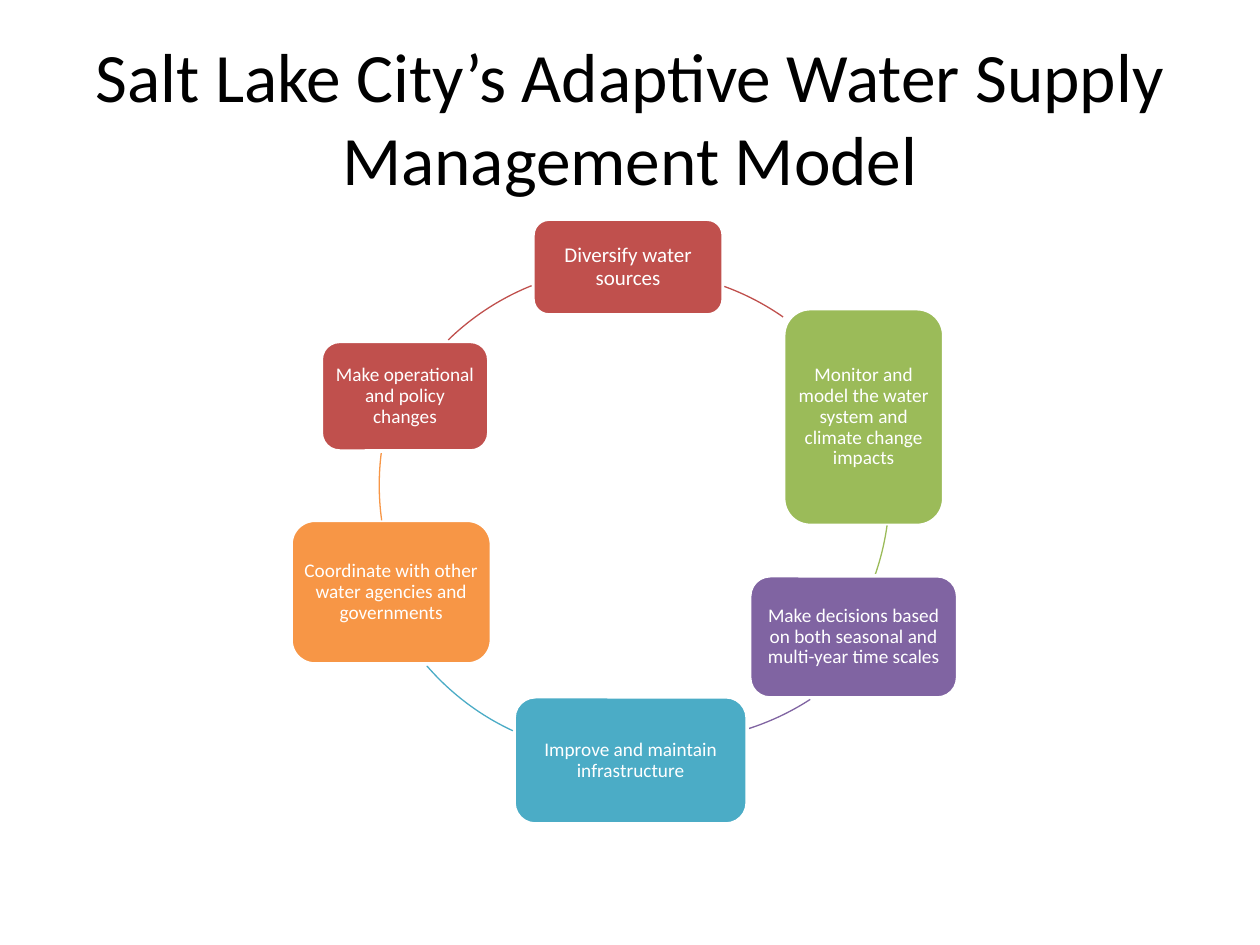
import math
from dataclasses import dataclass

from pptx import Presentation
from pptx import util as u
from pptx.dml import color
from pptx.enum import shapes, text


@dataclass(frozen=True)
class Theme:
    font: str = "Calibri"
    title_size: float = 39.6
    lead_size: float = 12
    step_size: float = 11
    black: str = "000000"
    white: str = "FFFFFF"
    red: str = "C0504D"
    green: str = "9BBB59"
    purple: str = "8064A2"
    teal: str = "4BACC6"
    orange: str = "F79646"


THEME = Theme()
RING = 4.08  # diameter of the circle each link lies on

# Step: wording, box (left, top, width, height), colour, type size,
# then the link to the next step: circle corner, start point, end point
STEPS = [
    ("Diversify water sources", (4.23, 1.74, 1.51, 0.76), THEME.red, THEME.lead_size,
     (3.01, 2.15), (5.75, 2.27), (6.22, 2.51)),
    ("Monitor and model the water system and climate change impacts",
     (6.22, 2.45, 1.27, 1.72), THEME.green, THEME.step_size,
     (2.98, 1.85), (7.04, 4.17), (6.95, 4.57)),
    ("Make decisions based on both seasonal and multi-year time scales",
     (5.95, 4.57, 1.65, 0.97), THEME.purple, THEME.step_size,
     (3.28, 1.8), (6.43, 5.55), (5.93, 5.78)),
    ("Improve and maintain infrastructure", (4.08, 5.53, 1.85, 1.01), THEME.teal,
     THEME.step_size, (2.89, 1.91), (4.07, 5.8), (3.39, 5.28)),
    ("Coordinate with other water agencies and governments",
     (2.31, 4.13, 1.59, 1.14), THEME.orange, THEME.step_size,
     (3.01, 1.81), (3.03, 4.13), (3.03, 3.58)),
    ("Make operational and policy changes", (2.55, 2.71, 1.33, 0.87), THEME.red,
     THEME.step_size, (2.94, 2.12), (3.56, 2.7), (4.22, 2.27)),
]


def rgb(value):
    return color.RGBColor.from_string(value)


def inches(values):
    return [u.Inches(value) for value in values]


def write(box, wording, size, ink):
    """Put one centred paragraph in the box."""
    frame = box.text_frame
    frame.word_wrap = True
    frame.vertical_anchor = text.MSO_ANCHOR.MIDDLE
    frame.text = wording
    para = frame.paragraphs[0]
    para.alignment = text.PP_ALIGN.CENTER
    span = para.runs[0]
    span.font.name = THEME.font
    span.font.size = u.Pt(size)
    span.font.color.rgb = rgb(ink)
    return para


def add_title(page, wording):
    box = page.shapes.add_textbox(*inches((0.5, 0.3, 9, 1.25)))
    write(box, wording, THEME.title_size, THEME.black)


def add_step(page, wording, place, fill, size):
    box = page.shapes.add_shape(shapes.MSO_SHAPE.ROUNDED_RECTANGLE, *inches(place))
    box.shadow.inherit = False
    box.fill.solid()
    box.fill.fore_color.rgb = rgb(fill)
    box.line.color.rgb = rgb(THEME.white)
    box.line.width = u.Pt(2)
    frame = box.text_frame
    frame.margin_left = frame.margin_right = u.Inches(0.05)
    frame.margin_top = frame.margin_bottom = u.Inches(0.05)
    write(box, wording, size, THEME.white).line_spacing = 0.9


def add_link(page, corner, start, end, ink):
    """Draw the clockwise arc from start to end on the circle at corner."""
    arc = page.shapes.add_shape(shapes.MSO_SHAPE.ARC, *inches((*corner, RING, RING)))
    arc.shadow.inherit = False
    arc.fill.background()
    arc.line.color.rgb = rgb(ink)
    arc.line.width = u.Pt(0.75)
    center_x, center_y = (value + RING / 2 for value in corner)
    for index, (x, y) in enumerate((start, end)):
        angle = math.degrees(math.atan2(y - center_y, x - center_x)) % 360
        # Angles are stored in 60000ths of a degree, adjustments in 100000ths
        arc.adjustments[index] = angle * 0.6


def main():
    deck = Presentation()
    deck.slide_width, deck.slide_height = inches((10, 7.5))
    page = deck.slides.add_slide(deck.slide_layouts[6])

    # Title
    add_title(page, "Salt Lake City’s Adaptive Water Supply Management Model")

    # Cycle of steps, each followed by its link to the next
    for wording, place, fill, size, corner, start, end in STEPS:
        add_step(page, wording, place, fill, size)
        add_link(page, corner, start, end, fill)

    deck.save("out.pptx")


if __name__ == "__main__":
    main()
